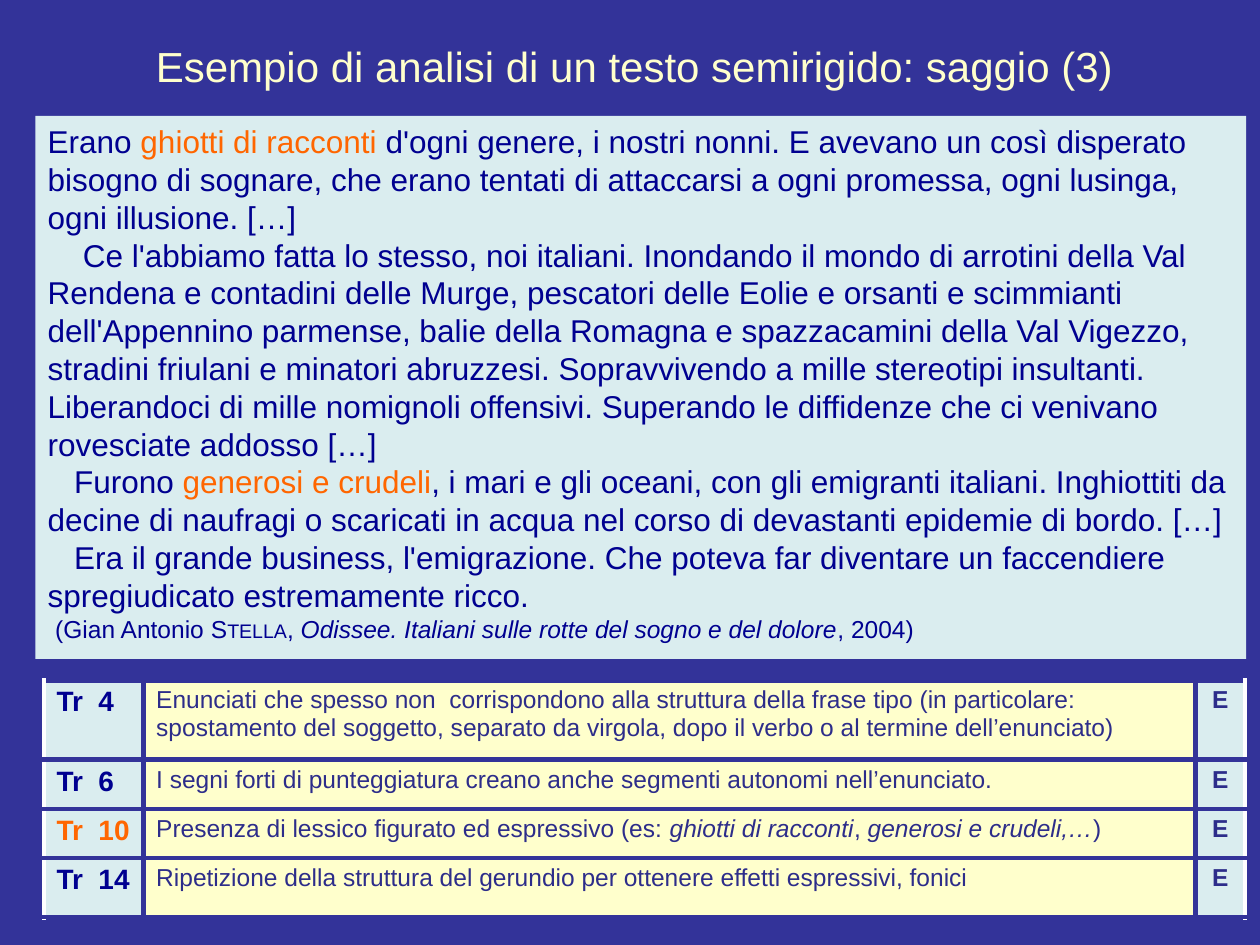
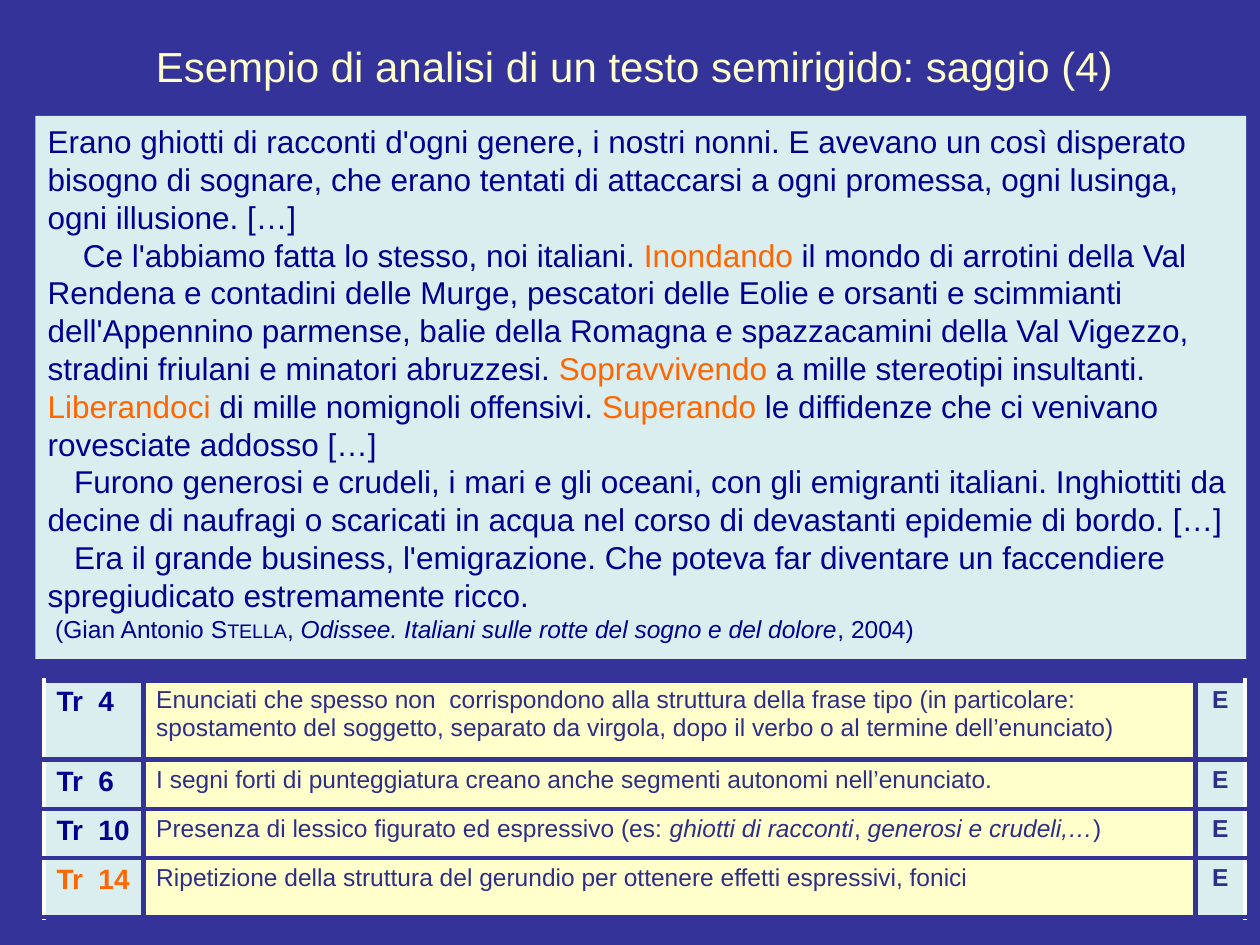
from lxml import etree
from pptx import Presentation
from pptx.dml.color import RGBColor
from pptx.enum.shapes import MSO_SHAPE
from pptx.enum.text import MSO_ANCHOR, MSO_AUTO_SIZE, PP_ALIGN
from pptx.oxml.ns import qn
from pptx.util import Inches, Pt

RECT = MSO_SHAPE.RECTANGLE
MIDDLE, TOP = MSO_ANCHOR.MIDDLE, MSO_ANCHOR.TOP
GROW = MSO_AUTO_SIZE.SHAPE_TO_FIT_TEXT
LEFT, CENTER = PP_ALIGN.LEFT, PP_ALIGN.CENTER

COLORS = {
    "back": "333399", "title": "FFFFCC", "panel": "DAEDEF", "body": "000090",
    "mark": "FF6600", "note": "2D2D8A", "cream": "FFFFCC", "white": "FFFFFF",
}
FONT = "Arial"
COLS, ROWS = 100, 75

TITLE = "Esempio di analisi di un testo semirigido: saggio ({})"
STORY = [
    (0, "Erano ghiotti di racconti d'ogni genere, i nostri nonni. E avevano un così "
        "disperato bisogno di sognare, che erano tentati di attaccarsi a ogni promessa, "
        "ogni lusinga, ogni illusione. […]"),
    (2.8, "Ce l'abbiamo fatta lo stesso, noi italiani. Inondando il mondo di arrotini "
          "della Val Rendena e contadini delle Murge, pescatori delle Eolie e orsanti e "
          "scimmianti dell'Appennino parmense, balie della Romagna e spazzacamini della "
          "Val Vigezzo, stradini friulani e minatori abruzzesi. Sopravvivendo a mille "
          "stereotipi insultanti. Liberandoci di mille nomignoli offensivi. Superando le "
          "diffidenze che ci venivano rovesciate addosso […]"),
    (2.1, "Furono generosi e crudeli, i mari e gli oceani, con gli emigranti italiani. "
          "Inghiottiti da decine di naufragi o scaricati in acqua nel corso di devastanti "
          "epidemie di bordo. […]"),
    (2.1, "Era il grande business, l'emigrazione. Che poteva far diventare un faccendiere "
          "spregiudicato estremamente ricco."),
]
CREDIT = ("(Gian Antonio |Stella|, "
          "|Odissee. Italiani sulle rotte del sogno e del dolore|, 2004)")
TRAITS = {
    "Tr  4": "Enunciati che spesso non  corrispondono alla struttura della frase tipo "
             "(in particolare: spostamento del soggetto, separato da virgola, dopo il "
             "verbo o al termine dell’enunciato)",
    "Tr  6": "I segni forti di punteggiatura creano anche segmenti autonomi nell’enunciato.",
    "Tr  10": "Presenza di lessico figurato ed espressivo (es: |ghiotti di racconti|, "
              "|generosi e crudeli,…|)",
    "Tr  14": "Ripetizione della struttura del gerundio per ottenere effetti espressivi, "
              "fonici",
}
WIDTHS = [7.9, 83.5, 3.9]
HEIGHTS = [6.3, 3.9, 3.9, 4.7]
PAGES = [
    (3, "Tr  10", ["ghiotti di racconti", "generosi e crudeli"]),
    (4, "Tr  14", ["Inondando", "Sopravvivendo", "Liberandoci", "Superando"]),
]


def color(name):
    return RGBColor.from_string(COLORS[name])


def accent(run):
    run.font.color.rgb = color("mark")


def slant(run):
    run.font.italic = True


def caps(run):
    run._r.get_or_add_rPr().set("cap", "small")


class Deck:
    def __init__(self):
        self.prs = Presentation()
        self.prs.slide_width, self.prs.slide_height = Inches(10), Inches(7.5)
        self.slide = None

    def col(self, count):
        return int(self.prs.slide_width * count / COLS)

    def row(self, count):
        return int(self.prs.slide_height * count / ROWS)

    def area(self, x, y, w, h):
        return self.col(x), self.row(y), self.col(w), self.row(h)

    def page(self):
        self.slide = self.prs.slides.add_slide(self.prs.slide_layouts[6])
        fill = self.slide.background.fill
        fill.solid()
        fill.fore_color.rgb = color("back")

    def words(self, para, text, size, tint, bold=False, align=LEFT, indent=0, styles=()):
        para.alignment = align
        font = para.font
        font.name, font.size, font.bold = FONT, Pt(size), bold
        font.color.rgb = color(tint)
        if indent:
            para._p.get_or_add_pPr().set("indent", str(self.col(indent)))
        for index, part in enumerate(text.split("|")):
            if part:
                run = para.add_run()
                run.text = part
                if index % 2:
                    styles[index // 2 % len(styles)](run)

    def title(self, text):
        frame = self.slide.shapes.add_textbox(*self.area(2.7, 1.3, 95.3, 7.9)).text_frame
        frame.word_wrap = True
        frame.vertical_anchor = MIDDLE
        self.words(frame.paragraphs[0], text, 24, "title", align=CENTER)

    def story(self, marks):
        shape = self.slide.shapes.add_shape(RECT, *self.area(2.8, 9.2, 96.1, 43.1))
        shape.shadow.inherit = False
        shape.fill.solid()
        shape.fill.fore_color.rgb = color("panel")
        shape.line.fill.background()
        frame = shape.text_frame
        frame.word_wrap = True
        frame.auto_size = GROW
        frame.vertical_anchor = TOP
        para = frame.paragraphs[0]
        for indent, text in STORY:
            for mark in marks:
                text = text.replace(mark, f"|{mark}|")
            self.words(para, text, 18, "body", indent=indent, styles=[accent])
            para = frame.add_paragraph()
        self.words(para, CREDIT, 14, "body", indent=0.6, styles=[caps, slant])

    def edge(self, cell, left, right):
        props = cell._tc.get_or_add_tcPr()
        for side, tint in zip("LRTB", (left, right, "back", "back")):
            line = etree.SubElement(props, qn(f"a:ln{side}"), w=str(Pt(3)))
            fill = etree.SubElement(line, qn("a:solidFill"))
            etree.SubElement(fill, qn("a:srgbClr"), val=COLORS[tint])

    def cell(self, cell, text, size, tint, back, left="back", right="back", **style):
        self.edge(cell, left, right)
        cell.fill.solid()
        cell.fill.fore_color.rgb = color(back)
        self.words(cell.text_frame.paragraphs[0], text, size, tint, **style)

    def traits(self, chosen):
        place = self.area(3.5, 54, sum(WIDTHS), sum(HEIGHTS))
        table = self.slide.shapes.add_table(len(TRAITS), len(WIDTHS), *place).table
        table.first_row = table.horz_banding = False
        for column, width in zip(table.columns, WIDTHS):
            column.width = self.col(width)
        for line, height, (tag, note) in zip(table.rows, HEIGHTS, TRAITS.items()):
            line.height = self.row(height)
            code, text, grade = line.cells
            tint = "mark" if tag == chosen else "body"
            self.cell(code, tag, 16, tint, "panel", left="white", bold=True)
            code.text_frame.paragraphs[0].space_before = Pt(3.2)
            self.cell(text, note, 14, "note", "cream", styles=[slant])
            self.cell(grade, "E", 14, "note", "panel", right="white", bold=True, align=CENTER)


def main():
    deck = Deck()
    for number, chosen, marks in PAGES:
        deck.page()
        deck.title(TITLE.format(number))
        deck.traits(chosen)
        deck.story(marks)
    deck.prs.save("out.pptx")


if __name__ == "__main__":
    main()
